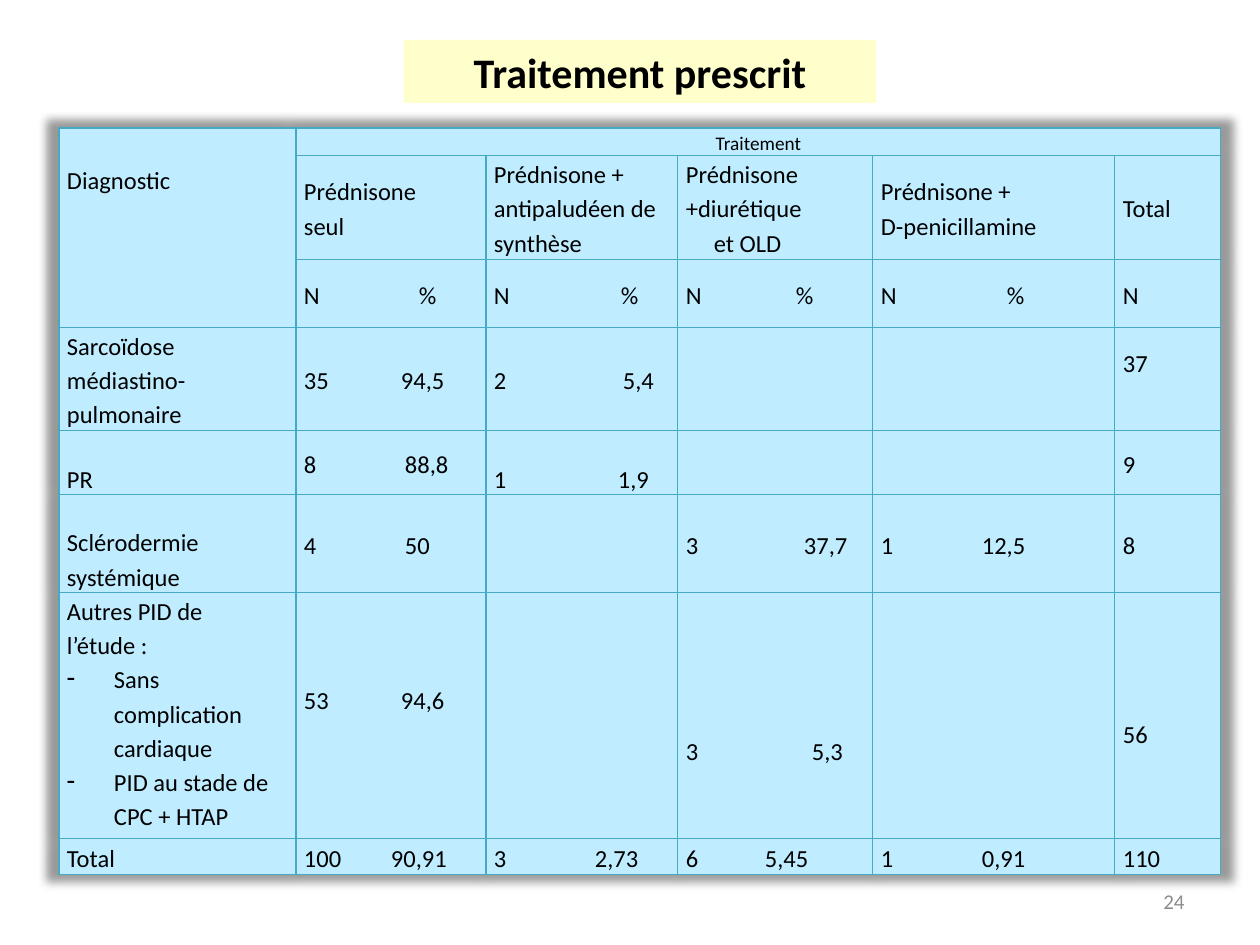
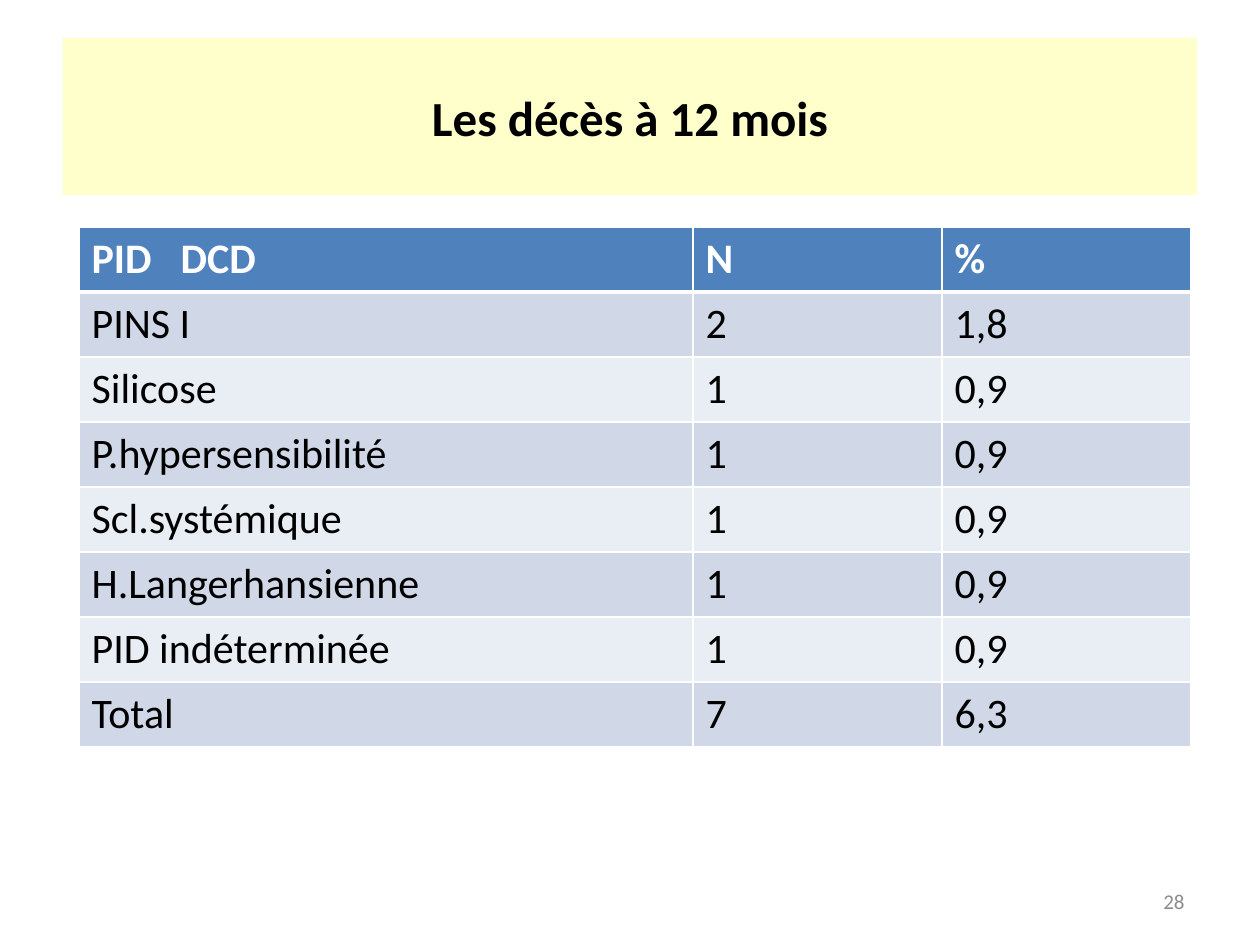
"""Build two slides on prescribed treatments and deaths at twelve months."""
import dataclasses

import pptx
import pptx.dml.color
import pptx.enum.shapes
import pptx.enum.text
import pptx.oxml
import pptx.oxml.ns
import pptx.util

PX = 914400 / 126
FONT = "Calibri"
COLORS = {
    "text": "000000",
    "title_band": "FFFFCC",
    "page_number": "8C8C8C",
    "treatment_fill": "BFECFF",
    "treatment_border": "46AAC5",
    "white": "FFFFFF",
    "header": "4F81BD",
    "odd_row": "D0D8E8",
    "even_row": "E9EDF4",
}
ALIGN = pptx.enum.text.PP_ALIGN
ANCHOR = pptx.enum.text.MSO_ANCHOR
PAGE_NUMBER_BOX = (903, 876, 294, 50)


@dataclasses.dataclass
class Line:
    """One paragraph of a cell."""
    text: str
    tab: int = 0
    left: int = 0
    bullet: str = ""


@dataclasses.dataclass
class Entry:
    """Paragraphs of a cell and how they sit in it."""
    lines: list
    anchor: object = ANCHOR.MIDDLE
    top: int = 0
    bottom: int = 0
    size: int = 14
    align: object = ALIGN.LEFT


def px(length):
    """Turn px into EMU."""
    return pptx.util.Emu(round(length * PX))


def color(name):
    """Return a named colour."""
    return pptx.dml.color.RGBColor.from_string(COLORS[name])


def element(xml):
    """Parse a DrawingML element, adding its namespace."""
    tag, rest = xml[1:].split(" ", 1)
    return pptx.oxml.parse_xml(f"<{tag} {pptx.oxml.ns.nsdecls('a')} {rest}")


def add_run(paragraph, text, size, color_name="text", bold=False):
    """Add one formatted run."""
    run = paragraph.add_run()
    run.text = text
    run.font.name = FONT
    run.font.size = pptx.util.Pt(size)
    run.font.bold = bold
    run.font.color.rgb = color(color_name)


def set_tab(paragraph, position):
    """Give a paragraph a left tab stop."""
    paragraph._p.get_or_add_pPr().append(element(
        f'<a:tabLst ><a:tab pos="{px(position)}" algn="l"/></a:tabLst>'))


def set_cell(cell, fill, border, width, bottom_width=None):
    """Fill a cell and draw its four borders."""
    cell.fill.solid()
    cell.fill.fore_color.rgb = color(fill)
    properties = cell._tc.get_or_add_tcPr()
    for index, side in enumerate("LRTB"):
        points = bottom_width if side == "B" and bottom_width else width
        properties.insert(index, element(
            f'<a:ln{side} w="{pptx.util.Pt(points)}"><a:solidFill>'
            f'<a:srgbClr val="{COLORS[border]}"/></a:solidFill></a:ln{side}>'))


def add_grid(slide, left, top, columns, rows):
    """Add an unstyled table with the given column widths and row heights."""
    table = slide.shapes.add_table(
        len(rows), len(columns), px(left), px(top),
        px(sum(columns)), px(sum(rows))).table
    table.first_row = table.horz_banding = False
    for column, width in zip(table.columns, columns):
        column.width = px(width)
    for row, height in zip(table.rows, rows):
        row.height = px(height)
    return table


def add_title(slide, text, box, size):
    """Add the pale band with its bold centred title."""
    band = slide.shapes.add_shape(
        pptx.enum.shapes.MSO_SHAPE.RECTANGLE, *map(px, box))
    band.shadow.inherit = False
    band.fill.solid()
    band.fill.fore_color.rgb = color("title_band")
    band.line.fill.background()
    band.text_frame.word_wrap = True
    band.text_frame.vertical_anchor = ANCHOR.MIDDLE
    paragraph = band.text_frame.paragraphs[0]
    paragraph.alignment = ALIGN.CENTER
    add_run(paragraph, text, size, bold=True)


def add_page_number(slide, number):
    """Add the grey page number at the lower right."""
    frame = slide.shapes.add_textbox(*map(px, PAGE_NUMBER_BOX)).text_frame
    frame.word_wrap = True
    frame.vertical_anchor = ANCHOR.MIDDLE
    paragraph = frame.paragraphs[0]
    paragraph.alignment = ALIGN.RIGHT
    add_run(paragraph, str(number), 12, "page_number")


def label(*texts, **placement):
    """Make an entry of plain lines."""
    return Entry([Line(text) for text in texts], **placement)


def pair(count, percent, tab, **placement):
    """Make an entry with a count and a percentage at a tab stop."""
    return Entry([Line(f"{count}\t{percent}", tab)], **placement)


def write_entry(cell, entry):
    """Write an entry into a treatment cell."""
    cell.vertical_anchor = entry.anchor
    cell.margin_left = cell.margin_right = px(8)
    cell.margin_top, cell.margin_bottom = px(entry.top), px(entry.bottom)
    frame = cell.text_frame
    for index, line in enumerate(entry.lines):
        paragraph = frame.add_paragraph() if index else frame.paragraphs[0]
        paragraph.alignment = entry.align
        paragraph.line_spacing = 1.15
        properties = paragraph._p.get_or_add_pPr()
        if line.left:
            properties.set("marL", str(px(line.left)))
            properties.set("indent", str(-px(line.left) if line.bullet else 0))
        if line.bullet:
            properties.append(element(f'<a:buChar char="{line.bullet}"/>'))
        if line.tab:
            set_tab(paragraph, line.tab)
        add_run(paragraph, line.text, entry.size)


def add_treatment_table(slide, left, top):
    """Add the table of treatments by diagnosis, with its soft shadow."""
    other_diagnoses = Entry([
        Line("Autres PID de l’étude\u00a0:"),
        Line("Sans complication cardiaque", left=47, bullet="-"),
        Line("PID au stade de CPC + HTAP", left=47, bullet="-"),
    ], ANCHOR.TOP)
    combined = Entry([Line("Prédnisone +diurétique"), Line("et OLD", left=28)])
    rows = [
        [label("Diagnostic", anchor=ANCHOR.TOP, top=34),
         label("Traitement", size=11, align=ALIGN.CENTER),
         None, None, None, None],
        [None, label("Prédnisone", "seul"),
         label("Prédnisone + antipaludéen de synthèse"), combined,
         label("Prédnisone +", "D-penicillamine"), label("Total")],
        [None, pair("N", "%", 115), pair("N", "%", 127), pair("N", "%", 110),
         pair("N", "%", 126), label("N")],
        [label("Sarcoïdose médiastino-pulmonaire", anchor=ANCHOR.TOP),
         pair("35", "94,5", 97), pair("2", "5,4", 129), None, None,
         label("37", bottom=34)],
        [label("PR", anchor=ANCHOR.BOTTOM), pair("8", "88,8", 101),
         pair("1", "1,9", 124, anchor=ANCHOR.BOTTOM), None, None, label("9")],
        [label("Sclérodermie systémique", anchor=ANCHOR.BOTTOM),
         pair("4", "50", 101), None, pair("3", "37,7", 118),
         pair("1", "12,5", 101), label("8")],
        [other_diagnoses, pair("53", "94,6", 97, bottom=34), None,
         pair("3", "5,3", 126, top=69), None, label("56", top=34)],
        [label("Total"), pair("100", "90,91", 87), pair("3", "2,73", 101),
         pair("6", "5,45", 79), pair("1", "0,91", 101), label("110")],
    ]
    table = add_grid(slide, left, top, [237, 190, 192, 195, 242, 106],
                     [27, 104, 63, 103, 64, 98, 246, 36])
    table.cell(0, 0).merge(table.cell(2, 0))
    table.cell(0, 1).merge(table.cell(0, 5))
    for row_index, row in enumerate(rows):
        for column_index, entry in enumerate(row):
            cell = table.cell(row_index, column_index)
            set_cell(cell, "treatment_fill", "treatment_border", 0.75)
            if entry:
                write_entry(cell, entry)
    table._tbl.tblPr.insert(0, element(
        '<a:effectLst ><a:outerShdw blurRad="63500" sx="102000" sy="102000" '
        'algn="ctr" rotWithShape="0"><a:srgbClr val="000000">'
        '<a:alpha val="40000"/></a:srgbClr></a:outerShdw></a:effectLst>'))


def add_death_table(slide, left, top):
    """Add the banded table of deaths by diagnosis."""
    rows = [("PID\tDCD", "N", "%"), ("PINS I", "2", "1,8")]
    rows += [(name, "1", "0,9") for name in (
        "Silicose", "P.hypersensibilité", "Scl.systémique",
        "H.Langerhansienne", "PID indéterminée")]
    rows.append(("Total", "7", "6,3"))
    table = add_grid(slide, left, top, [614, 249, 249], [65] * len(rows))
    for row_index, row in enumerate(rows):
        header = row_index == 0
        band = "odd_row" if row_index % 2 else "even_row"
        for column_index, text in enumerate(row):
            cell = table.cell(row_index, column_index)
            set_cell(cell, "header" if header else band, "white", 1,
                     3 if header else None)
            paragraph = cell.text_frame.paragraphs[0]
            if "\t" in text:
                set_tab(paragraph, 89)
            add_run(paragraph, text, 24, "white" if header else "text", header)


def build_treatment_slide(slide):
    """Build the slide on prescribed treatments."""
    add_treatment_table(slide, 59, 128)
    add_title(slide, "Traitement prescrit", (404, 40, 472, 63), 24)
    add_page_number(slide, 24)


def build_death_slide(slide):
    """Build the slide on deaths at twelve months."""
    add_title(slide, "Les décès à 12 mois", (63, 38, 1134, 157), 28)
    add_death_table(slide, 79, 227)
    add_page_number(slide, 28)


def main():
    """Build and save the presentation."""
    presentation = pptx.Presentation()
    presentation.slide_width, presentation.slide_height = px(1260), px(945)
    for build in (build_treatment_slide, build_death_slide):
        build(presentation.slides.add_slide(presentation.slide_layouts[6]))
    presentation.save("out.pptx")


if __name__ == "__main__":
    main()
